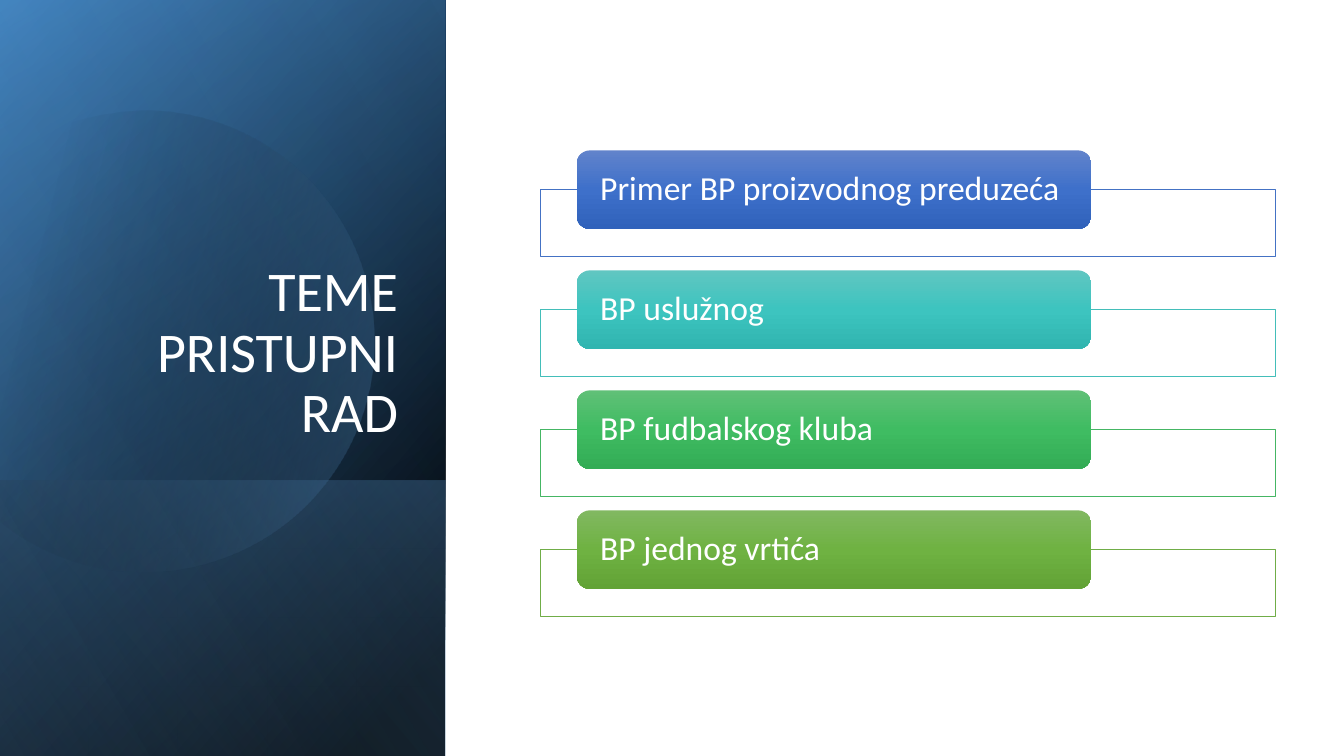
import dataclasses
import math

import lxml.etree
import pptx
import pptx.dml.color
import pptx.enum.shapes
import pptx.enum.text
import pptx.oxml.ns
import pptx.util

Cm = pptx.util.Cm
qn = pptx.oxml.ns.qn
SHAPES = pptx.enum.shapes.MSO_SHAPE


@dataclasses.dataclass(frozen=True)
class Theme:
    """Colours and type sizes of the slide; gradient stops are position, colour, opacity."""
    font: str = "Calibri"
    title_size: int = 40
    topic_size: int = 24
    white: str = "FFFFFF"
    base: tuple = ((8, "000000", 100), (100, "2E75B6", 100))
    glow: tuple = ((0, "000000", 0), (99, "5B9BD5", 46))
    footer: tuple = ((2, "5B9BD5", 29), (100, "000000", 30))
    circle: tuple = ((29, "000000", 0), (100, "5B9BD5", 43))
    veil: tuple = ((0, "000000", 0), (99, "9DC3E6", 11))


THEME = Theme()

TOPICS = (
    ("Primer BP proizvodnog preduzeća", "4472C4", ("6183CB", "3E70CA", "3062BB")),
    ("BP uslužnog", "43BEB9", ("60C6C1", "3DC4BF", "30B5B0")),
    ("BP fudbalskog kluba", "45B664", ("60C077", "3FBC62", "33AC55")),
    ("BP jednog vrtića", "70AD47", ("81B861", "6FB242", "62A336")),
)

CIRCLE_FRAME = (-1.4, 2.69, 10.85, 11.61)
CIRCLE_TURN = -16.1
CIRCLE_OUTLINE = (
    ("moveTo", ((3.78, 2.79),)),
    ("cubicBezTo", ((6.25, 2.84), (8.51, 4.5), (9.22, 6.99))),
    ("cubicBezTo", ((10.11, 10.08), (8.33, 13.28), (5.26, 14.17))),
    ("cubicBezTo", ((3.33, 14.73), (1.35, 14.25), (-0.08, 13.06))),
    ("lnTo", ((-0.38, 12.78),)),
    ("lnTo", ((-0.38, 4.45),)),
    ("lnTo", ((0, 4.09),)),
    ("cubicBezTo", ((0.58, 3.61), (1.27, 3.25), (2.03, 3.02))),
    ("cubicBezTo", ((2.62, 2.87), (3.2, 2.79), (3.78, 2.79))),
    ("close", ()),
)


def rgb(colour):
    """Return a colour object for a hex code."""
    return pptx.dml.color.RGBColor.from_string(colour)


def add_opacity(colour_element, percent):
    """Set the opacity of a colour element."""
    lxml.etree.SubElement(colour_element, qn("a:alpha"), val=str(percent * 1000))


def set_gradient(shape, stops, angle):
    """Fill a shape with a linear gradient and no line."""
    shape.shadow.inherit = False
    shape.line.fill.background()
    shape.fill.gradient()
    gradient = shape.element.spPr.find(qn("a:gradFill"))
    gradient.clear()
    gradient.set("rotWithShape", "1")
    stop_list = lxml.etree.SubElement(gradient, qn("a:gsLst"))
    for position, colour, opacity in stops:
        stop = lxml.etree.SubElement(stop_list, qn("a:gs"), pos=str(position * 1000))
        colour_element = lxml.etree.SubElement(stop, qn("a:srgbClr"), val=colour)
        if opacity < 100:
            add_opacity(colour_element, opacity)
    lxml.etree.SubElement(gradient, qn("a:lin"), ang=str(angle * 60000), scaled="0")


def write_text(shape, text, size, alignment, anchor):
    """Write one white paragraph into a shape."""
    frame = shape.text_frame
    frame.word_wrap = True
    frame.vertical_anchor = anchor
    paragraph = frame.paragraphs[0]
    paragraph.alignment = alignment
    paragraph.line_spacing = 0.9
    run = paragraph.add_run()
    run.text = text
    run.font.name = THEME.font
    run.font.size = pptx.util.Pt(size)
    run.font.color.rgb = rgb(THEME.white)


def add_layer(slide, box, stops, angle):
    """Cover a box with a quarter-turned, mirrored gradient rectangle."""
    left, top, width, height = box
    shape = slide.shapes.add_shape(
        SHAPES.RECTANGLE, Cm(left + (width - height) / 2),
        Cm(top + (height - width) / 2), Cm(height), Cm(width))
    shape.rotation = 90
    shape.element.spPr.find(qn("a:xfrm")).set("flipH", "1")
    set_gradient(shape, stops, angle)


def add_circle(slide, panel_left, panel_top):
    """Draw the turned, cut-off circle relative to the panel corner."""
    left, top, width, height = CIRCLE_FRAME
    x, y = panel_left + left, panel_top + top
    builder = slide.shapes.build_freeform(Cm(x), Cm(y))
    builder.add_line_segments(
        [(Cm(x + width), Cm(y)), (Cm(x + width), Cm(y + height)), (Cm(x), Cm(y + height))])
    circle = builder.convert_to_shape()
    circle.rotation = CIRCLE_TURN
    turn = math.radians(-CIRCLE_TURN)
    outline = circle.element.spPr.find(".//" + qn("a:path"))
    del outline[:]
    for command, points in CIRCLE_OUTLINE:
        segment = lxml.etree.SubElement(outline, qn("a:" + command))
        for point_x, point_y in points:
            across = point_x - left - width / 2
            down = point_y - top - height / 2
            turned_x = width / 2 + across * math.cos(turn) - down * math.sin(turn)
            turned_y = height / 2 + across * math.sin(turn) + down * math.cos(turn)
            lxml.etree.SubElement(
                segment, qn("a:pt"), x=str(int(Cm(turned_x))), y=str(int(Cm(turned_y))))
    set_gradient(circle, THEME.circle, 30)


def add_title_panel(slide, box):
    """Draw the dark panel with the title."""
    left, top, width, height = box
    footer_height = 6.95
    add_layer(slide, box, THEME.base, 50)
    add_layer(slide, box, THEME.glow, 30)
    add_layer(slide, (left, top + height - footer_height, width, footer_height),
              THEME.footer, 130)
    add_circle(slide, left, top)
    add_layer(slide, box, THEME.veil, 120)
    title = slide.shapes.add_textbox(
        Cm(left + 1.62), Cm(top + 4.68), Cm(8.66), Cm(6.65))
    write_text(title, "TEME PRISTUPNI RAD", THEME.title_size,
               pptx.enum.text.PP_ALIGN.RIGHT, pptx.enum.text.MSO_ANCHOR.BOTTOM)


def add_topic(group, box, topic):
    """Draw one topic: an outlined strip under a rounded label with its text."""
    left, top, width, height = box
    text, outline, colours = topic
    label_left, label_width, label_height = left + width * 0.05, width * 0.7, 1.98
    strip_top = top + label_height / 2
    strip = group.shapes.add_shape(
        SHAPES.RECTANGLE, Cm(left), Cm(strip_top), Cm(width), Cm(top + height - strip_top))
    strip.shadow.inherit = False
    strip.fill.solid()
    strip.fill.fore_color.rgb = rgb(THEME.white)
    add_opacity(strip.element.spPr.find(qn("a:solidFill"))[0], 90)
    strip.line.color.rgb = rgb(outline)
    strip.line.width = pptx.util.Pt(0.5)
    label = group.shapes.add_shape(
        SHAPES.ROUNDED_RECTANGLE, Cm(label_left), Cm(top), Cm(label_width), Cm(label_height))
    set_gradient(label, [(50 * i, colour, 100) for i, colour in enumerate(colours)], 90)
    inset = 0.1
    caption = group.shapes.add_textbox(
        Cm(label_left + inset), Cm(top + inset),
        Cm(label_width - 2 * inset), Cm(label_height - 2 * inset))
    frame = caption.text_frame
    frame.margin_left = frame.margin_right = Cm(0.49)
    frame.margin_top = frame.margin_bottom = 0
    write_text(caption, text, THEME.topic_size,
               pptx.enum.text.PP_ALIGN.LEFT, pptx.enum.text.MSO_ANCHOR.MIDDLE)


def add_topic_list(slide, box):
    """Stack the topics at equal steps in the box."""
    left, top, width, height = box
    topic_height = 2.68
    step = (height - topic_height) / (len(TOPICS) - 1)
    group = slide.shapes.add_group_shape()
    for index, topic in enumerate(TOPICS):
        add_topic(group, (left, top + index * step, width, topic_height), topic)


def main():
    """Build and save the presentation."""
    presentation = pptx.Presentation()
    presentation.slide_width = Cm(33.87)
    presentation.slide_height = Cm(19.05)
    slide = presentation.slides.add_slide(presentation.slide_layouts[6])
    add_title_panel(slide, (0, 0, 11.22, 19.05))
    add_topic_list(slide, (13.61, 3.79, 18.52, 11.75))
    presentation.save("out.pptx")


if __name__ == "__main__":
    main()
